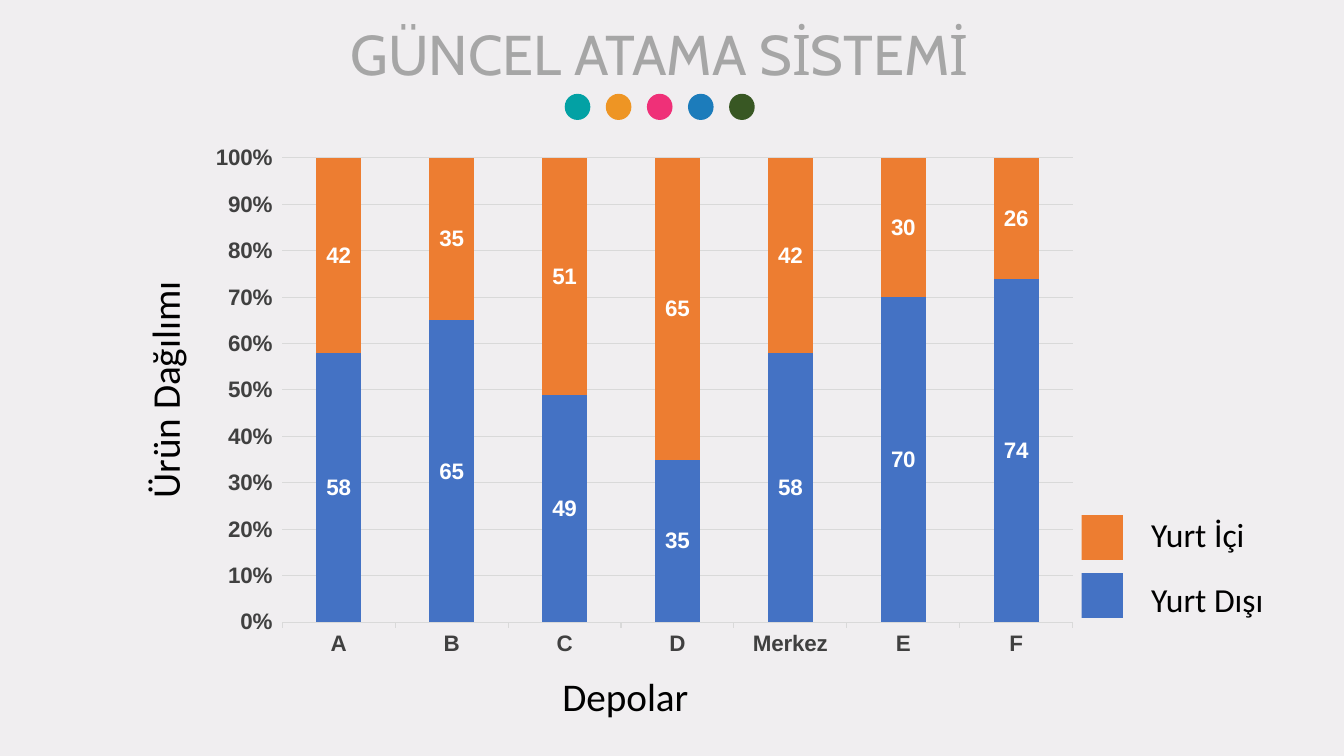
import pptx
import pptx.chart.data
import pptx.dml.color
import pptx.enum.chart
import pptx.enum.shapes
import pptx.enum.text
import pptx.oxml
import pptx.oxml.ns
import pptx.util

Pt = pptx.util.Pt
SHAPE = pptx.enum.shapes.MSO_SHAPE
ALIGN = pptx.enum.text.PP_ALIGN
COLORS = {
    "background": "F0EEF0", "title": "A6A6A6", "text": "000000",
    "axis": "404040", "grid": "D9D9D9", "label": "FFFFFF",
    "abroad": "4472C4", "domestic": "ED7D31",
    "teal": "03A1A4", "amber": "EE9524", "pink": "EF3078",
    "blue": "1C7CBB", "green": "385723",
}
DEPOTS = ["A", "B", "C", "D", "Merkez", "E", "F"]
SERIES = [
    ("Yurt Dışı", "abroad", [58, 65, 49, 35, 58, 70, 74]),
    ("Yurt İçi", "domestic", [42, 35, 51, 65, 42, 30, 26]),
]


def rgb(name):
    """Return the named colour."""
    return pptx.dml.color.RGBColor.from_string(COLORS[name])


def set_font(font, size, color, name, bold=False):
    """Format a font."""
    font.size, font.name, font.bold = Pt(size), name, bold
    font.color.rgb = rgb(color)


def add_text(s, text, x, y, w, h, size=28, color="text", font="Calibri",
             align=ALIGN.LEFT, rotation=0):
    """Add one line of text in a box."""
    sp = s.shapes.add_textbox(Pt(x), Pt(y), Pt(w), Pt(h))
    sp.rotation = rotation
    tf = sp.text_frame
    tf.word_wrap = True
    p = tf.paragraphs[0]
    p.alignment = align
    r = p.add_run()
    r.text = text
    set_font(r.font, size, color, font)


def add_block(s, kind, x, y, w, h, color):
    """Add a plain filled shape."""
    sp = s.shapes.add_shape(kind, Pt(x), Pt(y), Pt(w), Pt(h))
    sp.shadow.inherit = False
    sp.fill.solid()
    sp.fill.fore_color.rgb = rgb(color)
    sp.line.fill.background()


def add_header(s, x, y, w):
    """Add the title with a centred row of dots below it."""
    add_text(s, "GÜNCEL ATAMA SİSTEMİ", x, y, w, 55.4, size=40, color="title",
             font="Cabin", align=ALIGN.CENTER)
    dots, size, step = ["teal", "amber", "pink", "blue", "green"], 18.3, 29.35
    left = x + (w - size - step * (len(dots) - 1)) / 2
    for i, color in enumerate(dots):
        add_block(s, SHAPE.OVAL, left + i * step, y + 56.9, size, 18.7, color)


def set_plot_layout(chart, **fractions):
    """Fix the inner plot area as fractions of the chart."""
    plot_area = chart._chartSpace.chart.plotArea
    for old in plot_area.findall(pptx.oxml.ns.qn("c:layout")):
        plot_area.remove(old)
    sizes = "".join(f'<c:{k} val="{v}"/>' for k, v in fractions.items())
    plot_area.insert(0, pptx.oxml.parse_xml(
        f'<c:layout {pptx.oxml.ns.nsdecls("c")}><c:manualLayout>'
        '<c:layoutTarget val="inner"/><c:xMode val="edge"/>'
        f'<c:yMode val="edge"/>{sizes}</c:manualLayout></c:layout>'))


def add_depot_chart(s, x, y, w, h):
    """Add the stacked chart of product shares by depot."""
    data = pptx.chart.data.CategoryChartData()
    data.categories = DEPOTS
    for name, _, values in SERIES:
        data.add_series(name, values)
    chart = s.shapes.add_chart(
        pptx.enum.chart.XL_CHART_TYPE.COLUMN_STACKED_100,
        Pt(x), Pt(y), Pt(w), Pt(h), data).chart
    chart.has_legend = chart.has_title = False
    set_font(chart.font, 10, "text", "Calibri")
    set_plot_layout(chart, x=0.094, y=0.043, w=0.887, h=0.874)

    plot = chart.plots[0]
    plot.gap_width, plot.overlap, plot.vary_by_categories = 150, 100, False
    for series, (_, color, _) in zip(plot.series, SERIES):
        series.format.fill.solid()
        series.format.fill.fore_color.rgb = rgb(color)
        labels = series.data_labels
        labels.show_value = True
        labels.position = pptx.enum.chart.XL_LABEL_POSITION.CENTER
        set_font(labels.font, 16, "label", "Arial", bold=True)

    for axis in (chart.category_axis, chart.value_axis):
        set_font(axis.tick_labels.font, 16, "axis", "Arial", bold=True)
        axis.major_tick_mark = pptx.enum.chart.XL_TICK_MARK.OUTSIDE
    value_axis = chart.value_axis
    value_axis.minimum_scale, value_axis.maximum_scale = 0, 1
    value_axis.major_unit = 0.1
    value_axis.tick_labels.number_format = "0%"
    value_axis.tick_labels.number_format_is_linked = False
    value_axis.format.line.fill.background()
    value_axis.has_major_gridlines = True
    for line in (chart.category_axis.format.line,
                 value_axis.major_gridlines.format.line):
        line.color.rgb = rgb("grid")
        line.width = Pt(0.75)


def add_axis_titles(s, x, y, w, h):
    """Add the axis titles beside and below the chart box."""
    add_text(s, "Ürün Dağılımı", x - 128, y + h / 2 - 47.2, 207.4, 41,
             rotation=270)
    add_text(s, "Depolar", x + w / 2 - 65.5, y + h + 0.7, 106.6, 42.5)


def add_legend(s, x, y):
    """Add the colour keys, top series first."""
    for i, (name, color, _) in enumerate(reversed(SERIES)):
        add_block(s, SHAPE.RECTANGLE, x, y + i * 41.4, 29.5, 32, color)
        add_text(s, name, x + 42.5, y - 4.3 + i * 46.1, 101.5, 36, size=24)


def main():
    """Build and save the slide."""
    prs = pptx.Presentation()
    prs.slide_width, prs.slide_height = Pt(960), Pt(540)
    s = prs.slides.add_slide(prs.slide_layouts[6])
    s.background.fill.solid()
    s.background.fill.fore_color.rgb = rgb("background")
    chart_box = (141.8, 96.5, 636.5, 379.4)
    add_depot_chart(s, *chart_box)
    add_legend(s, 772.6, 367.9)
    add_header(s, 193.7, 10.1, 555.1)
    add_axis_titles(s, *chart_box)
    prs.save("out.pptx")


if __name__ == "__main__":
    main()
